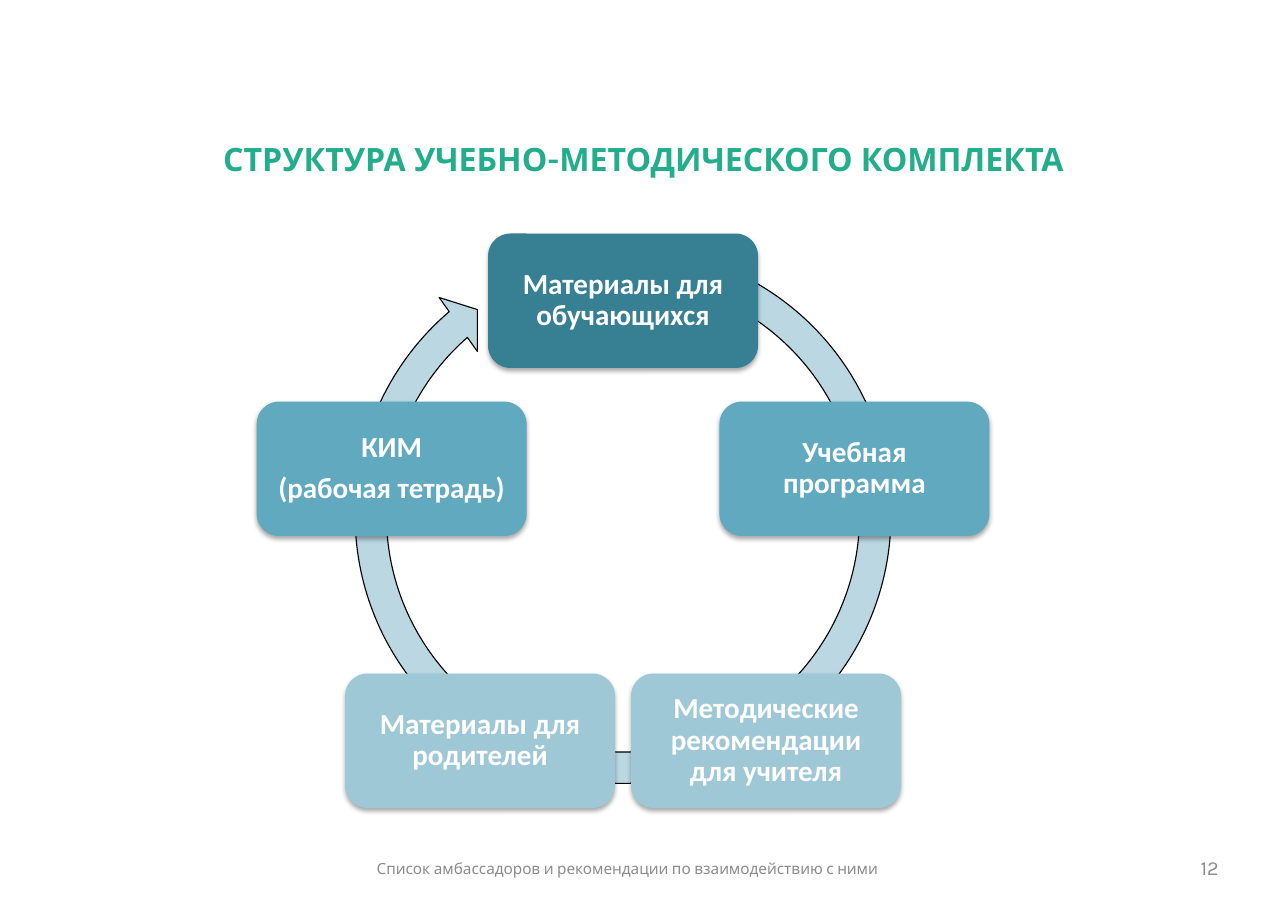
import math

import lxml.etree
import pptx
import pptx.dml.color
import pptx.enum.shapes
import pptx.enum.text
import pptx.oxml
import pptx.util

Inches = pptx.util.Inches
Pt = pptx.util.Pt
ALIGN = pptx.enum.text.PP_ALIGN
ANCHOR = pptx.enum.text.MSO_ANCHOR
SHAPE = pptx.enum.shapes.MSO_SHAPE

STAGES = [
    (["Материалы для обучающихся"], "377F92"),
    (["Учебная программа"], "60A9BF"),
    (["Методические рекомендации для учителя"], "9FC8D6"),
    (["Материалы для родителей"], "9FC8D6"),
    (["КИМ", "(рабочая тетрадь)"], "60A9BF"),
]
SHADOW = (
    '<a:effectLst xmlns:a="http://schemas.openxmlformats.org/drawingml/2006/main">'
    '<a:outerShdw blurRad="40000" dist="23000" dir="5400000" rotWithShape="0">'
    '<a:srgbClr val="000000"><a:alpha val="35000"/></a:srgbClr>'
    "</a:outerShdw></a:effectLst>"
)


def color(code):
    """Turn a hex string into a colour."""
    return pptx.dml.color.RGBColor.from_string(code)


def write(shape, lines, font, size, code, align, anchor, insets, bold=False):
    """Fill a shape with paragraphs that share one style."""
    frame = shape.text_frame
    frame.word_wrap = True
    frame.vertical_anchor = anchor
    frame.margin_left = frame.margin_right = Inches(insets[0])
    frame.margin_top = frame.margin_bottom = Inches(insets[1])
    frame.text = "\n".join(lines)
    for paragraph in frame.paragraphs:
        paragraph.alignment = align
        paragraph.font.name = font
        paragraph.font.size = Pt(size)
        paragraph.font.bold = bold
        paragraph.font.color.rgb = color(code)


def add_label(slide, box, text, size, code, align, anchor=ANCHOR.MIDDLE, bold=False):
    """Place one line of heading or footer text in a box."""
    label = slide.shapes.add_textbox(*map(Inches, box))
    write(label, [text], "Karla", size, code, align, anchor, (0.11, 0.05), bold)


def add_ring_arrow(slide, box):
    """Draw the circular arrow behind the stages."""
    ring = slide.shapes.add_shape(SHAPE.CIRCULAR_ARROW, *map(Inches, box))
    for index, value in enumerate((0.055, 3.307, 137.538, 173.994, 0.058)):
        ring.adjustments[index] = value
    ring.shadow.inherit = False
    ring.fill.solid()
    ring.fill.fore_color.rgb = color("BAD7E2")
    ring.line.color.rgb = color("000000")
    ring.line.width = Pt(0.75)


def add_stage(slide, box, lines, fill):
    """Draw one rounded stage card with its soft shadow."""
    stage = slide.shapes.add_shape(SHAPE.ROUNDED_RECTANGLE, *map(Inches, box))
    stage.fill.solid()
    stage.fill.fore_color.rgb = color(fill)
    stage.line.fill.background()
    stage.element.spPr.append(pptx.oxml.parse_xml(SHADOW))
    write(stage, lines, "Calibri", 19, "FFFFFF", ALIGN.CENTER, ANCHOR.MIDDLE,
          (0.08, 0.08), True)
    for paragraph in stage.text_frame.paragraphs:
        paragraph.line_spacing = 0.9
        paragraph.space_after = Pt(6.65)


def add_cycle(slide, box):
    """Set the stages evenly around a circle, clockwise from the top."""
    left, top, width, height = box
    stage_width, stage_height = 2.45, 1.22
    radius = (width - stage_width) / 2 / math.sin(math.tau / len(STAGES))
    center_x = left + width / 2
    center_y = top + stage_height / 2 + radius
    ring_size = 5.18
    add_ring_arrow(slide, (center_x - ring_size / 2, top - 0.03, ring_size, ring_size))
    for index, (lines, fill) in enumerate(STAGES):
        angle = math.tau * index / len(STAGES)
        stage_left = center_x + radius * math.sin(angle) - stage_width / 2
        stage_top = center_y - radius * math.cos(angle) - stage_height / 2
        add_stage(slide, (stage_left, stage_top, stage_width, stage_height), lines, fill)


def add_footer(slide, box):
    """Place the document name and the page number side by side."""
    left, top, width, height = box
    name_width = 5.13
    add_label(slide, (left, top, name_width, height),
              "Список амбассадоров и рекомендации по взаимодействию с ними",
              10, "8C8C8C", ALIGN.LEFT)
    add_label(slide, (left + name_width, top, width - name_width, height),
              "12", 13, "8C8C8C", ALIGN.RIGHT)


def main():
    """Build the slide and save it."""
    deck = pptx.Presentation()
    deck.slide_width = Inches(11.69)
    deck.slide_height = Inches(8.27)
    slide = deck.slides.add_slide(deck.slide_layouts[6])
    add_label(slide, (0.58, 1.22, 10.52, 0.64),
              "СТРУКТУРА УЧЕБНО-МЕТОДИЧЕСКОГО КОМПЛЕКТА",
              21, "23AE8B", ALIGN.CENTER, ANCHOR.TOP, True)
    add_cycle(slide, (2.33, 2.12, 6.65, 5.22))
    add_footer(slide, (3.31, 7.66, 7.86, 0.44))
    deck.save("out.pptx")


if __name__ == "__main__":
    main()
